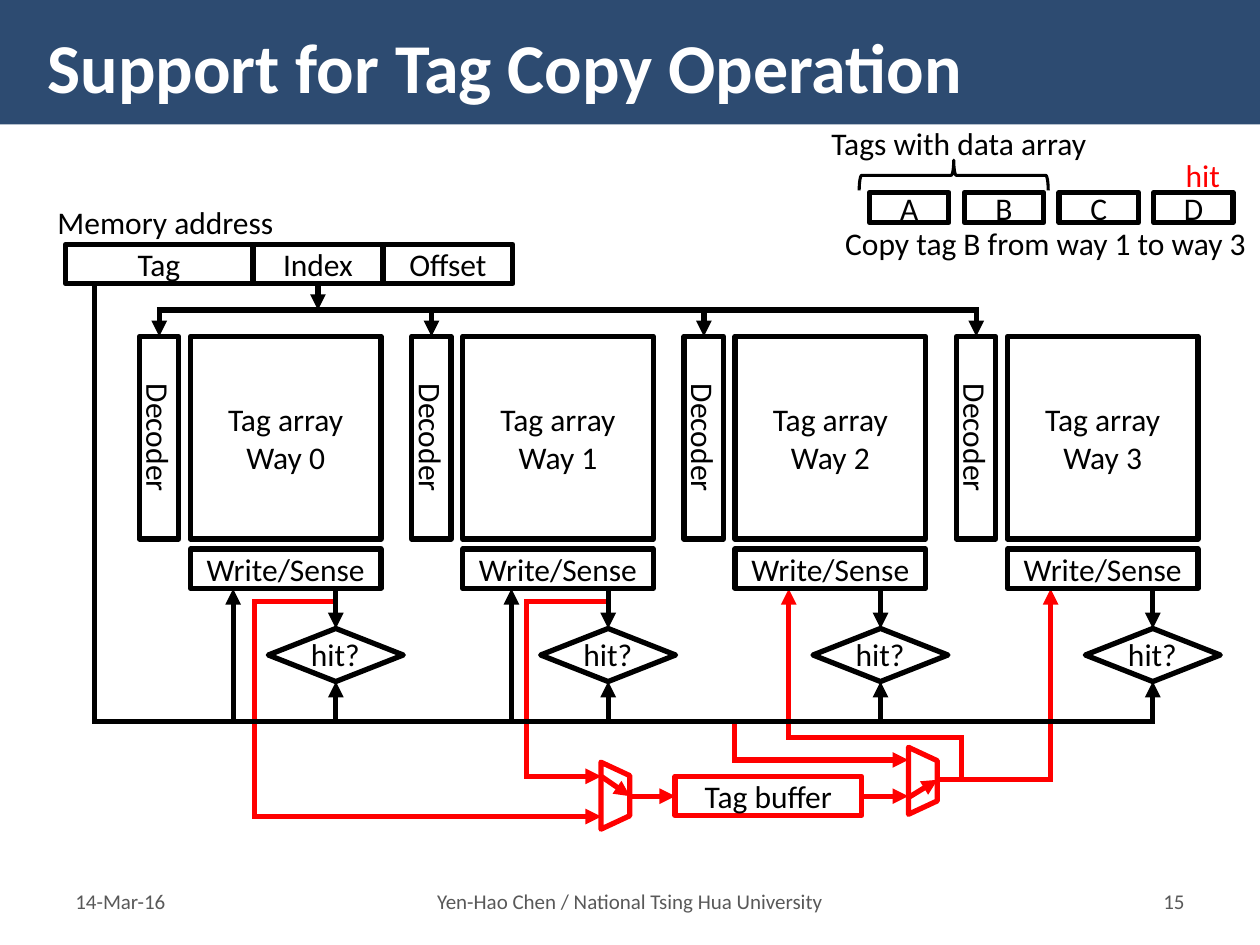
from dataclasses import dataclass
from typing import Optional

from lxml import etree
from pptx import Presentation
from pptx.dml.color import RGBColor
from pptx.enum import shapes as sh, text as tx
from pptx.oxml import ns
from pptx.util import Cm, Pt

HUES = {"band": "2D4B71", "ink": "000000", "red": "FF0000",
        "gray": "595959", "white": "FFFFFF"}
FONT = "Calibri"
KIND = sh.MSO_SHAPE
SIDE = tx.PP_ALIGN
TOP, LEFT, BOTTOM, RIGHT = range(4)
PITCH = 5.49
HALF = 0.05
BUS, FEED, SENSE = 14.55, 6.25, 11.87


@dataclass
class Box:
    x: float
    y: float
    w: float
    h: float
    words: str = ""
    kind: int = KIND.RECTANGLE
    hue: str = "ink"
    fill: Optional[str] = None
    turn: int = 0
    width: float = 3


@dataclass
class Label:
    x: float
    y: float
    w: float
    h: float
    words: str
    hue: str = "ink"
    size: int = 18
    side: int = SIDE.LEFT
    wrap: bool = False


@dataclass
class Joint:
    shape: object
    site: int


def color(hue: str) -> RGBColor:
    return RGBColor.from_string(HUES[hue])


def write(frame, words: str, hue: str, size: int, side: int, bold: bool = False) -> None:
    frame.text = words
    for para in frame.paragraphs:
        para.alignment = side
        for run in para.runs:
            run.font.name, run.font.size, run.font.bold = FONT, Pt(size), bold
            run.font.color.rgb = color(hue)


def draw_box(slide, box: Box):
    shape = slide.shapes.add_shape(box.kind, Cm(box.x), Cm(box.y), Cm(box.w), Cm(box.h))
    shape.shadow.inherit = False
    shape.rotation = box.turn
    shape.line.color.rgb = color(box.hue)
    shape.line.width = Pt(box.width)
    if box.fill:
        shape.fill.solid()
        shape.fill.fore_color.rgb = color(box.fill)
    else:
        shape.fill.background()
    if box.words:
        shape.text_frame.vertical_anchor = tx.MSO_ANCHOR.MIDDLE
        write(shape.text_frame, box.words, "ink", 18, SIDE.CENTER)
    return shape


def draw_label(slide, label: Label) -> None:
    item = slide.shapes.add_textbox(Cm(label.x), Cm(label.y), Cm(label.w), Cm(label.h))
    item.text_frame.word_wrap = label.wrap
    if label.wrap:
        item.text_frame.vertical_anchor = tx.MSO_ANCHOR.MIDDLE
    write(item.text_frame, label.words, label.hue, label.size, label.side)


def draw_line(slide, start: tuple, end: tuple, hue: str = "ink", arrow: bool = True,
              source: Optional[Joint] = None, target: Optional[Joint] = None) -> None:
    line = slide.shapes.add_connector(sh.MSO_CONNECTOR.STRAIGHT, *map(Cm, start + end))
    line.line.color.rgb = color(hue)
    line.line.width = Pt(3)
    if source:
        line.begin_connect(source.shape, source.site)
        line.begin_x, line.begin_y = map(Cm, start)
    if target:
        line.end_connect(target.shape, target.site)
        line.end_x, line.end_y = map(Cm, end)
    props = line._element.spPr
    if arrow:
        etree.SubElement(props.find(ns.qn("a:ln")), ns.qn("a:tailEnd"), type="triangle")
    etree.SubElement(props, ns.qn("a:effectLst"))


def draw_route(slide, points: list, hue: str, arrow: bool = True) -> None:
    last = len(points) - 2
    for i, ((ax, ay), (bx, by)) in enumerate(zip(points, points[1:])):
        if ay == by:
            pad = HALF if bx > ax else -HALF
            ax -= pad if i > 0 else 0
            bx += pad if i < last else 0
        draw_line(slide, (ax, ay), (bx, by), hue, arrow and i == last)


def draw_head(slide) -> None:
    title = slide.shapes.title
    title.left, title.top, title.width, title.height = map(Cm, (0.71, 0.25, 24, 2.13))
    title.text_frame.word_wrap = False
    title.text_frame.vertical_anchor = tx.MSO_ANCHOR.MIDDLE
    write(title.text_frame, "Support for Tag Copy Operation", "white", 40, SIDE.LEFT, True)
    band = draw_box(slide, Box(0, 0, 25.4, 2.51, fill="band"))
    band.line.fill.background()
    title.element.addprevious(band.element)


def draw_copy(slide) -> None:
    for x, hue, points in (
        (6.77, "red", [(5.13, 16.46), (12.12, 16.46)]),
        (12.26, "red", [(10.62, 15.65), (12.12, 15.65)]),
    ):
        tap = points[0][0]
        draw_route(slide, [(x, 12.12), (tap, 12.12)] + points, hue)
    draw_route(slide, [(18.9, 15.72), (21.18, 15.72), (21.18, SENSE)], "red")
    draw_route(slide, [(19.38, 15.72), (19.38, 14.86), (15.9, 14.86), (15.9, SENSE)], "red")
    draw_route(slide, [(14.81, BUS), (14.81, 15.32), (18.31, 15.32)], "red")
    store = draw_box(slide, Box(13.61, 15.65, 3.76, 0.79, "Tag buffer", hue="red"))
    for x, y in ((11.73, 15.75), (17.93, 15.45)):
        draw_box(slide, Box(x, y, 1.35, 0.58, kind=KIND.FLOWCHART_MANUAL_OPERATION,
                            hue="red", turn=270))
    draw_line(slide, (12.7, 16.05), (13.61, 16.05), "red", target=Joint(store, LEFT))
    draw_line(slide, (17.37, 16.05), (18.31, 16.05), "red", source=Joint(store, RIGHT))
    draw_line(slide, (12.12, 15.65), (12.7, 16.05), "red")
    draw_line(slide, (18.31, 16.08), (18.9, 15.72), "red")


def draw_way(slide, way: int) -> None:
    x = 3.84 + way * PITCH
    mid = x + 2.93
    port = x - 0.63
    coder = draw_box(slide, Box(port - 2.05, 8.43, 4.09, 0.79, "Decoder", turn=90))
    draw_box(slide, Box(x, 6.78, 3.84, 4.09, f"Tag array\nWay {way}"))
    draw_box(slide, Box(x, 11.07, 3.84, 0.79, "Write/Sense"))
    test = draw_box(slide, Box(mid - 1.36, 12.67, 2.72, 1.07, kind=KIND.FLOWCHART_DECISION))
    draw_label(slide, Label(mid - 0.75, 12.67, 1.5, 1.02, "hit?"))
    draw_line(slide, (port, FEED), (port, 6.78), target=Joint(coder, LEFT))
    draw_line(slide, (mid, SENSE), (mid, 12.67), target=Joint(test, TOP))
    draw_line(slide, (mid, BUS), (mid, 13.74), target=Joint(test, BOTTOM))


def draw_bus(slide) -> None:
    draw_box(slide, Box(1.32, 4.93, 3.77, 0.79, "Tag"))
    index = draw_box(slide, Box(5.1, 4.93, 2.62, 0.79, "Index"))
    draw_box(slide, Box(7.72, 4.93, 2.62, 0.79, "Offset"))
    draw_line(slide, (6.41, 5.72), (6.41, FEED), source=Joint(index, BOTTOM))
    draw_line(slide, (3.16, FEED), (19.73, FEED), arrow=False)
    draw_route(slide, [(1.9, 5.72), (1.9, BUS), (23.29, BUS)], "ink", False)
    for x in (4.7, 10.31):
        draw_line(slide, (x, BUS), (x, SENSE))


def draw_tags(slide) -> None:
    draw_box(slide, Box(18.92, 1.63, 0.61, 3.81, kind=KIND.LEFT_BRACE, turn=90, width=1.75))
    for i, name in enumerate("ABCD"):
        draw_box(slide, Box(17.53 + i * 1.91, 3.88, 1.6, 0.61, name, fill="white"))


def main() -> None:
    deck = Presentation()
    deck.slide_width, deck.slide_height = Cm(25.4), Cm(19.05)
    slide = deck.slides.add_slide(deck.slide_layouts[5])
    draw_head(slide)
    draw_copy(slide)
    for way in range(4):
        draw_way(slide, way)
    draw_bus(slide)
    draw_tags(slide)
    for label in (
        Label(0.91, 3.96, 4.9, 1.02, "Memory address"),
        Label(16.79, 4.4, 8.69, 1.02, "Copy tag B from way 1 to way 3"),
        Label(16.51, 2.38, 5.72, 1.02, "Tags with data array"),
        Label(23.65, 3.03, 1.22, 1.02, "hit", "red"),
        Label(1.27, 17.65, 3.02, 1.02, "14-Mar-16", "gray", 12, wrap=True),
        Label(4.7, 17.65, 16, 1.02, "Yen-Hao Chen / National Tsing Hua University",
              "gray", 12, SIDE.CENTER, True),
        Label(21.11, 17.65, 3.02, 1.02, "15", "gray", 12, SIDE.RIGHT, True),
    ):
        draw_label(slide, label)
    deck.save("out.pptx")


if __name__ == "__main__":
    main()
